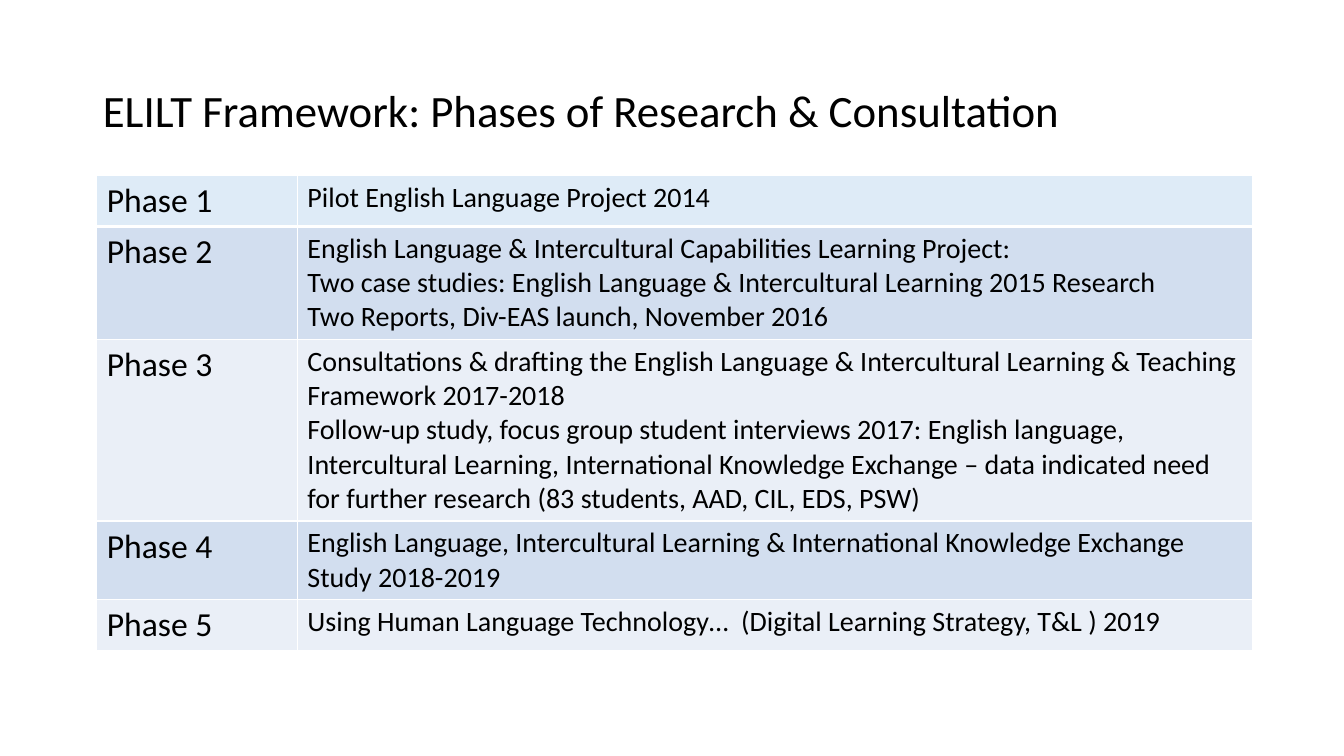
from dataclasses import dataclass

from lxml.etree import SubElement
from pptx import Presentation
from pptx.dml.color import RGBColor
from pptx.enum.text import MSO_ANCHOR as Anchor, PP_ALIGN as Align
from pptx.oxml.ns import qn
from pptx.slide import Slide
from pptx.table import _Cell as Cell
from pptx.text.text import _Paragraph as Paragraph
from pptx.util import Inches, Pt

BLACK = RGBColor(0x00, 0x00, 0x00)
WHITE = RGBColor(0xFF, 0xFF, 0xFF)
HEADER_BLUE = RGBColor(0xDE, 0xEB, 0xF7)
DARK_BAND = RGBColor(0xD2, 0xDE, 0xEF)
LIGHT_BAND = RGBColor(0xEA, 0xEF, 0xF7)

FONT = "Calibri"
TITLE_SIZE, PHASE_SIZE, DETAIL_SIZE = 32, 24, 20
COLUMN_WIDTHS = (1.99, 9.47)


@dataclass(frozen=True)
class Phase:
    height: float
    paragraphs: tuple[tuple[str, ...], ...]


PHASES = (
    Phase(0.5, (("Pilot English Language Project 2014",),)),
    Phase(1.12, (
        ("English Language & Intercultural Capabilities Learning Project:",
         "Two case studies: English Language & Intercultural Learning 2015 Research"),
        ("Two Reports, Div-EAS launch, November 2016",),
    )),
    Phase(1.8, ((
        "Consultations & drafting the English Language & Intercultural Learning & Teaching "
        "Framework 2017-2018",
        "Follow-up study, focus group student interviews 2017: English language, "
        "Intercultural Learning, International Knowledge Exchange – data indicated need "
        "for further research (83 students, AAD, CIL, EDS, PSW)",
    ),)),
    Phase(0.78, ((
        "English Language, Intercultural Learning & International Knowledge Exchange "
        "Study 2018-2019",
    ),)),
    Phase(0.5, ((
        "Using Human Language Technology…  (Digital Learning Strategy, T&L ) 2019",
    ),)),
)


def add_lines(paragraph: Paragraph, lines: tuple[str, ...], size: int) -> None:
    for index, line in enumerate(lines):
        if index:
            paragraph.add_line_break()
        run = paragraph.add_run()
        run.text = line
        run.font.name = FONT
        run.font.size = Pt(size)
        run.font.bold = False
        run.font.color.rgb = BLACK


def add_title(slide: Slide, text: str) -> None:
    title = slide.shapes.title
    title.left, title.top = Inches(0.92), Inches(0.4)
    title.width, title.height = Inches(11.5), Inches(1.45)
    title.text_frame.vertical_anchor = Anchor.MIDDLE
    title.text_frame.word_wrap = True
    paragraph = title.text_frame.paragraphs[0]
    paragraph.alignment = Align.LEFT
    paragraph.line_spacing = 0.9
    add_lines(paragraph, (text,), TITLE_SIZE)


def add_borders(cell: Cell, top: int, bottom: int) -> None:
    properties = cell._tc.get_or_add_tcPr()
    for side, width in (("L", 1), ("R", 1), ("T", top), ("B", bottom)):
        line = SubElement(properties, qn(f"a:ln{side}"), w=str(Pt(width)))
        fill = SubElement(line, qn("a:solidFill"))
        SubElement(fill, qn("a:srgbClr"), val=str(WHITE))


def fill_cell(cell: Cell, paragraphs: tuple[tuple[str, ...], ...], size: int, row: int) -> None:
    add_borders(cell, top=3 if row == 1 else 1, bottom=3 if row == 0 else 1)
    cell.fill.solid()
    band = DARK_BAND if row % 2 else LIGHT_BAND
    cell.fill.fore_color.rgb = band if row else HEADER_BLUE
    frame = cell.text_frame
    for index, lines in enumerate(paragraphs):
        paragraph = frame.add_paragraph() if index else frame.paragraphs[0]
        add_lines(paragraph, lines, size)


def add_phase_table(slide: Slide) -> None:
    height = sum(phase.height for phase in PHASES)
    table = slide.shapes.add_table(
        len(PHASES), len(COLUMN_WIDTHS),
        Inches(0.96), Inches(1.74), Inches(sum(COLUMN_WIDTHS)), Inches(height),
    ).table
    table.first_row = False
    table.horz_banding = False
    for column, width in zip(table.columns, COLUMN_WIDTHS):
        column.width = Inches(width)
    for row, phase in enumerate(PHASES):
        table.rows[row].height = Inches(phase.height)
        fill_cell(table.cell(row, 0), ((f"Phase {row + 1}",),), PHASE_SIZE, row)
        fill_cell(table.cell(row, 1), phase.paragraphs, DETAIL_SIZE, row)


def main() -> None:
    presentation = Presentation()
    presentation.slide_width = Inches(13.33)
    presentation.slide_height = Inches(7.5)
    slide = presentation.slides.add_slide(presentation.slide_layouts[5])
    add_title(slide, "ELILT Framework: Phases of Research & Consultation")
    add_phase_table(slide)
    presentation.save("out.pptx")


if __name__ == "__main__":
    main()
